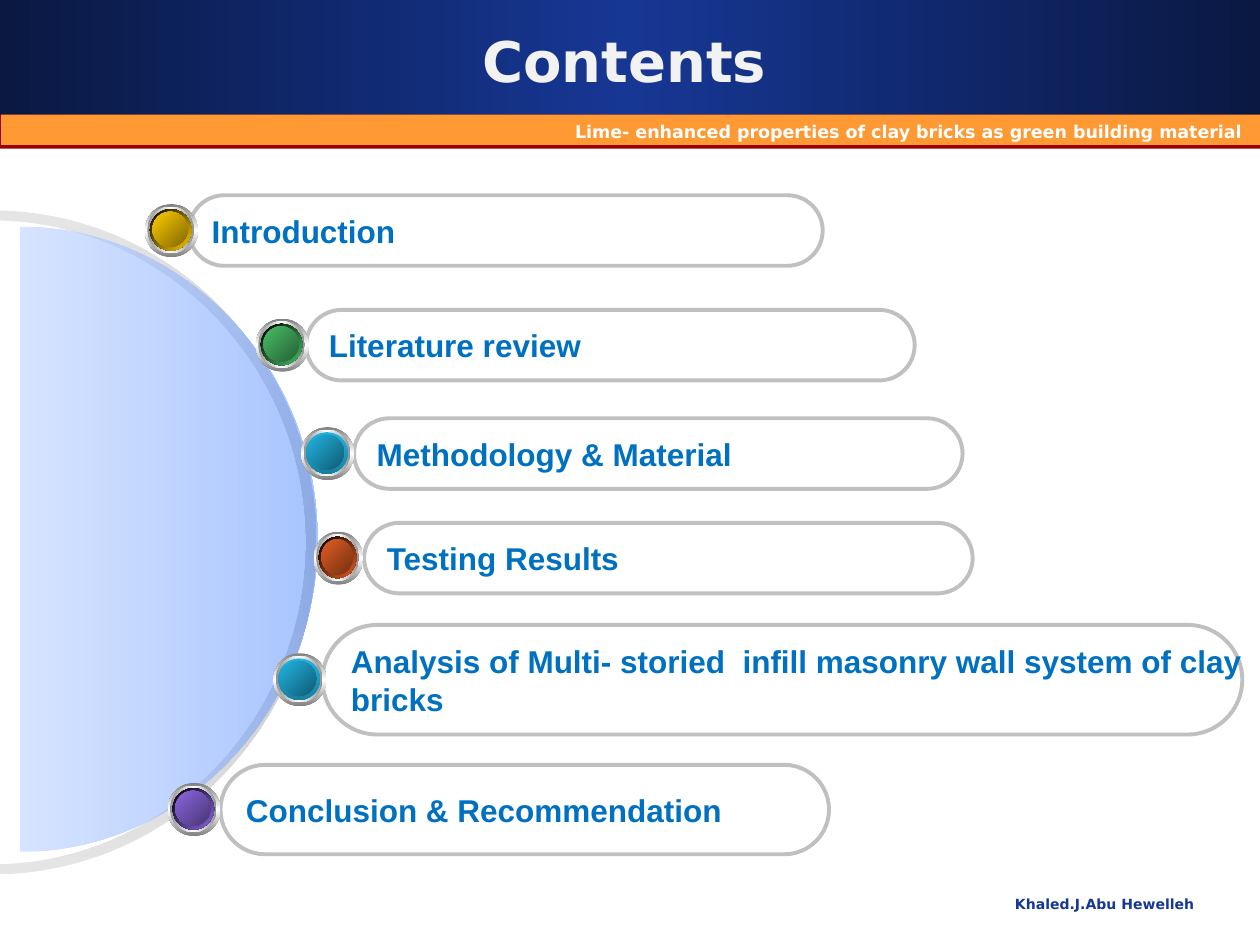
from dataclasses import dataclass

from lxml.etree import Element, SubElement
from pptx import Presentation
from pptx.dml.color import RGBColor as Rgb
from pptx.enum.shapes import MSO_SHAPE as Kind
from pptx.enum.text import MSO_ANCHOR as Anchor, PP_ALIGN as Align
from pptx.oxml.ns import qn
from pptx.util import Inches, Pt


@dataclass(frozen=True)
class Theme:
    """Hold the colours, fonts and type sizes."""
    head: tuple = ("0A1842", "163794", "0A1842")
    rule: str = "990000"
    strip: str = "FF9933"
    white: str = "FFFFFF"
    title: str = "F2F2F2"
    foot: str = "163794"
    item: str = "0070C0"
    edge: str = "C0C0C0"
    arc: tuple = ("E5E5E5", "C0C0C0", "E5E5E5")
    disc: tuple = ("B9D0FF", "6699FF")
    outer: tuple = ("808080", "FFFFFF", "808080")
    inner: tuple = ("929292", "FFFFFF", "929292")
    gold: tuple = (("000000", "FFCC00"), 45, ("FFCC00", "826800"))
    green: tuple = (("000000", "48BE67"), 45, ("48BE67", "256135"))
    teal: tuple = (("21B3E1", "1880A1"), 90, ("21B3E1", "115B73"))
    red: tuple = (("000000", "E35E23"), 45, ("E35E23", "743012"))
    plum: tuple = (("000000", "8D67E1"), 45, ("8D67E1", "483573"))
    sans: str = "DejaVu Sans"
    arial: str = "Arial"
    big: int = 32
    mid: int = 18
    small: int = 10
    tiny: int = 8


THEME = Theme()
ITEMS = [
    (("Introduction",), (1.5, 1.55, 5.03, 0.56), (1.15, 0.42), THEME.gold),
    (("Literature review",), (2.43, 2.46, 4.83, 0.56), (2.03, 0.42), THEME.green),
    (("Methodology & Material",), (2.81, 3.32, 4.83, 0.56), (2.39, 0.42), THEME.teal),
    (("Testing Results",), (2.89, 4.15, 4.83, 0.56), (2.49, 0.39), THEME.red),
    (("Analysis of Multi- storied  infill masonry wall system of clay", "bricks"),
     (2.56, 4.96, 7.3, 0.87), (2.17, 0.42), THEME.teal),
    (("Conclusion & Recommendation",), (1.75, 6.07, 4.83, 0.71), (1.33, 0.42), THEME.plum),
]


def place(box):
    """Turn a box of inches into lengths."""
    return [Inches(v) for v in box]


def blend(shape, tones, angle, alpha=100):
    """Fill a shape with evenly spaced gradient stops."""
    shape.fill.gradient()
    grad = shape._element.spPr.find(qn("a:gradFill"))
    stops = grad.find(qn("a:gsLst"))
    for old in list(stops):
        stops.remove(old)
    for i, tone in enumerate(tones):
        stop = SubElement(stops, qn("a:gs"), pos=str(100000 * i // (len(tones) - 1)))
        hue = SubElement(stop, qn("a:srgbClr"), val=tone)
        if alpha < 100:
            SubElement(hue, qn("a:alpha"), val=str(alpha * 1000))
    grad.find(qn("a:lin")).set("ang", str(angle * 60000))


def paint(shape, fill=None, line=None, width=1):
    """Set a plain fill and line without a shadow."""
    shape.shadow.inherit = False
    if fill:
        shape.fill.solid()
        shape.fill.fore_color.rgb = Rgb.from_string(fill)
    else:
        shape.fill.background()
    if line:
        shape.line.color.rgb = Rgb.from_string(line)
        shape.line.width = Pt(width)
    else:
        shape.line.fill.background()
    return shape


def write(shape, lines, size, tone, face, align, anchor=Anchor.MIDDLE, wrap=True):
    """Write bold paragraphs into a shape."""
    frame = shape.text_frame
    for key, val in {"word_wrap": wrap, "vertical_anchor": anchor}.items():
        setattr(frame, key, val)
    frame.text = "\n".join(lines)
    for para in frame.paragraphs:
        para.alignment = align
        font = para.runs[0].font
        for key, val in {"name": face, "size": Pt(size), "bold": True}.items():
            setattr(font, key, val)
        font.color.rgb = Rgb.from_string(tone)


def header(slide, box):
    """Draw the title band and the strip below it."""
    x, y, w, h = box
    add = slide.shapes.add_shape
    band = paint(add(Kind.RECTANGLE, *place((x, y, w, 0.91))))
    blend(band, THEME.head, 0)
    paint(add(Kind.RECTANGLE, *place((x, y + 0.91, w, h - 0.91))), THEME.rule)
    strip = paint(add(Kind.RECTANGLE, *place((x + 0.01, y + 0.91, w - 0.01, 0.24))), THEME.strip)
    write(strip, ["Lime- enhanced properties of clay bricks as green building material "],
          THEME.small, THEME.white, THEME.sans, Align.RIGHT, Anchor.TOP)
    title = slide.shapes.title
    spot = place((x + 0.33, y + 0.17, w - 0.75, 0.62))
    for key, val in zip(("left", "top", "width", "height"), spot):
        setattr(title, key, val)
    write(title, ["Contents"], THEME.big, THEME.title, THEME.sans, Align.CENTER)
    tree = title._element.getparent()
    tree.append(title._element)


def curve(box):
    """List the Bezier points of a right half ellipse, top to bottom."""
    x, y, w, h = box
    bend, mid = 0.55, y + h / 2
    rise = bend * h / 2
    return [(x, y), (x + bend * w, y), (x + w, mid - rise), (x + w, mid),
            (x + w, mid + rise), (x + bend * w, y + h), (x, y + h)]


def outline(slide, *arcs):
    """Build one closed shape whose half ellipses are joined by lines."""
    start, *rest = [place(spot) for arc in arcs for spot in arc]
    build = slide.shapes.build_freeform(*start)
    build.add_line_segments(rest, close=True)
    shape = build.convert_to_shape()
    lines = list(shape._element.iter(qn("a:lnTo")))
    for first in [7 * i + j for i in range(len(arcs)) for j in (0, 3)]:
        bow = Element(qn("a:cubicBezTo"))
        lines[first].addprevious(bow)
        for line in lines[first:first + 3]:
            bow.append(line[0])
            line.getparent().remove(line)
    return paint(shape)


def dome(slide, box):
    """Draw the grey arc and the blue half disc."""
    x, y, w, h = box
    core = curve((x, y + 0.08, w - 0.08, h - 0.16))
    blend(outline(slide, curve(box), core[::-1]), THEME.arc, 90)
    disc = outline(slide, curve((x + 0.22, y + 0.13, w - 0.21, h - 0.31)))
    blend(disc, THEME.disc, 0, 56)


def bead(slide, box, tones):
    """Draw a round bullet from nested ellipses."""
    x, y, w, h = box
    back, turn, front = tones
    layers = [(0, 0, THEME.outer, 90), (0.02, 0.05, THEME.inner, 0),
              (0.04, 0.09, back, turn), (0.06, 0.14, front, 45)]
    for gap, cut, mix, angle in layers:
        spot = place((x + gap, y + gap, w - cut, h - cut))
        blend(paint(slide.shapes.add_shape(Kind.OVAL, *spot)), mix, angle)


def entry(slide, box, lines, dot, tones):
    """Draw one item as a pill with its bullet."""
    pill = paint(slide.shapes.add_shape(Kind.ROUNDED_RECTANGLE, *place(box)),
                 line=THEME.edge, width=2.25)
    pill.adjustments[0] = 0.5
    write(pill, lines, THEME.mid, THEME.item, THEME.arial, Align.LEFT, wrap=False)
    left, wide = dot
    bead(slide, (left, box[1] + box[3] / 2 - 0.21, wide, 0.42), tones)


def footer(slide, box):
    """Write the author's name."""
    note = slide.shapes.add_textbox(*place(box))
    write(note, ["Khaled.J.Abu Hewelleh"], THEME.tiny, THEME.foot, THEME.sans,
          Align.RIGHT, Anchor.TOP)


def main():
    """Build and save the slide."""
    deck = Presentation()
    deck.slide_width, deck.slide_height = Inches(10), Inches(7.5)
    slide = deck.slides.add_slide(deck.slide_layouts[5])
    header(slide, (0, 0, 10, 1.18))
    footer(slide, (6.41, 7.06, 3.17, 0.35))
    dome(slide, (-0.06, 1.67, 2.57, 5.27))
    for lines, box, dot, tones in ITEMS:
        entry(slide, box, lines, dot, tones)
    deck.save("out.pptx")


if __name__ == "__main__":
    main()
